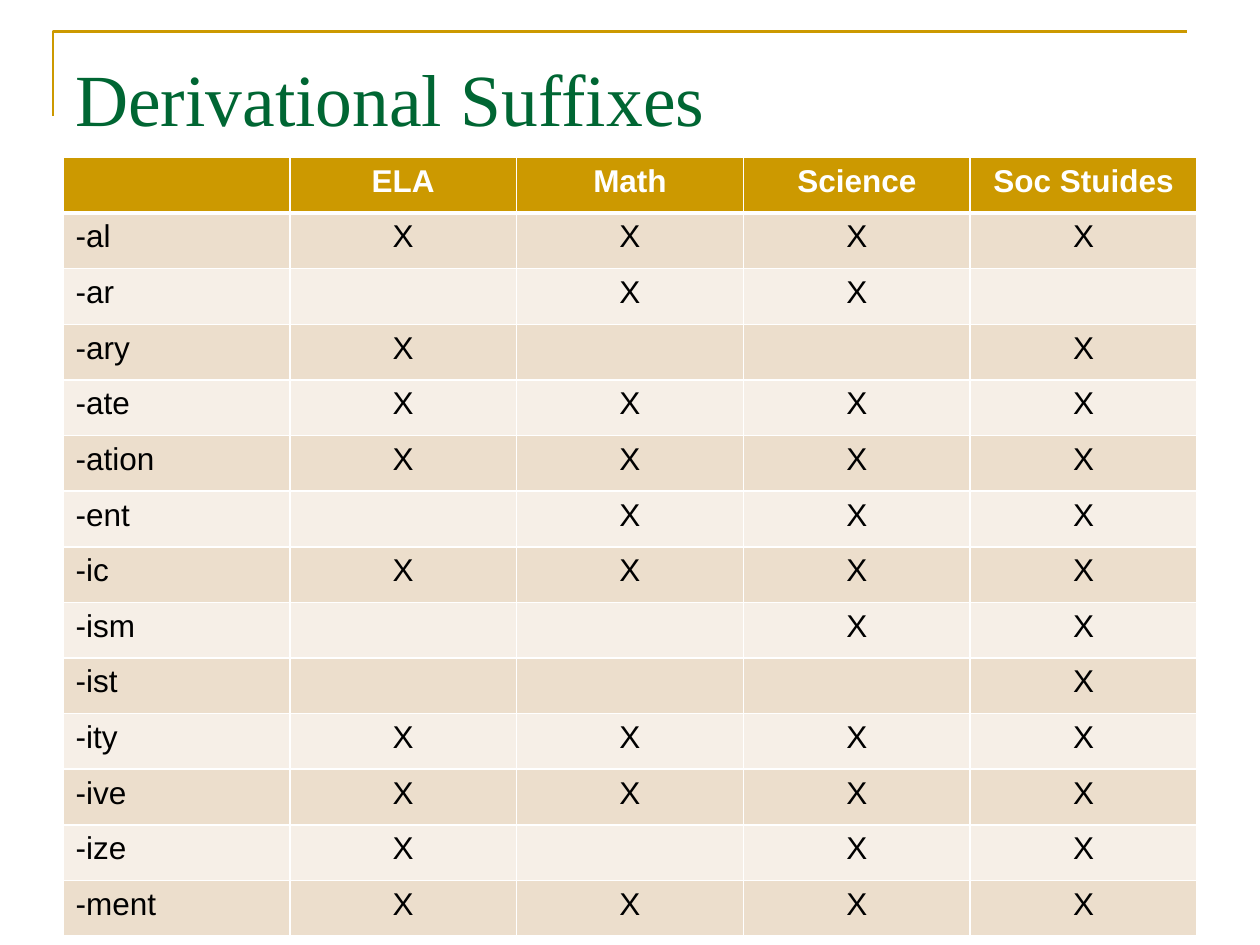
from lxml.etree import SubElement
from pptx import Presentation
from pptx.dml.color import RGBColor
from pptx.enum.text import MSO_ANCHOR, PP_ALIGN
from pptx.oxml.ns import qn
from pptx.util import Inches, Pt

GOLD = RGBColor(0xCC, 0x99, 0x00)
GREEN = RGBColor(0x00, 0x66, 0x33)
BAND_DARK = RGBColor(0xEC, 0xDE, 0xCC)
BAND_LIGHT = RGBColor(0xF6, 0xEF, 0xE7)
WHITE = RGBColor(0xFF, 0xFF, 0xFF)
BLACK = RGBColor(0x00, 0x00, 0x00)

SUBJECTS = ["ELA", "Math", "Science", "Soc Stuides"]
# Suffix and its marks, one character per subject
SUFFIXES = [
    ("-al", "XXXX"),
    ("-ar", " XX "),
    ("-ary", "X  X"),
    ("-ate", "XXXX"),
    ("-ation", "XXXX"),
    ("-ent", " XXX"),
    ("-ic", "XXXX"),
    ("-ism", "  XX"),
    ("-ist", "   X"),
    ("-ity", "XXXX"),
    ("-ive", "XXXX"),
    ("-ize", "X XX"),
    ("-ment", "XXXX"),
]


def add_corner_rule(slide, left, top, width, height):
    builder = slide.shapes.build_freeform(left, top + height)
    builder.add_line_segments([(left, top), (left + width, top)], close=False)
    sp = builder.convert_to_shape()
    sp.shadow.inherit = False
    sp.fill.background()
    sp.line.color.rgb = GOLD
    sp.line.width = Pt(1.5)


def add_title(slide, left, top, width, height, text):
    tf = slide.shapes.add_textbox(left, top, width, height).text_frame
    tf.word_wrap = True
    tf.vertical_anchor = MSO_ANCHOR.TOP
    tf.margin_top = Inches(0.12)
    p = tf.paragraphs[0]
    p.text = text
    p.font.name = "Times New Roman"
    p.font.size = Pt(42)
    p.font.color.rgb = GREEN


def set_borders(cell, top, bottom):
    tc_pr = cell._tc.get_or_add_tcPr()
    for side, width in (("L", 1), ("R", 1), ("T", top), ("B", bottom)):
        ln = SubElement(tc_pr, qn(f"a:ln{side}"), w=str(Pt(width)))
        fill = SubElement(ln, qn("a:solidFill"))
        SubElement(fill, qn("a:srgbClr"), val=str(WHITE))


def add_suffix_table(slide, left, top, width, height):
    rows = [["", *SUBJECTS]]
    rows += [[suffix, *marks] for suffix, marks in SUFFIXES]
    table = slide.shapes.add_table(
        len(rows), len(rows[0]), left, top, width, height).table
    for row in table.rows:
        row.height = int(height / len(rows))

    for i, texts in enumerate(rows):
        header = i == 0
        fill = GOLD if header else BAND_DARK if i % 2 else BAND_LIGHT
        for j, text in enumerate(texts):
            cell = table.cell(i, j)
            # The rule under the header is heavier
            set_borders(cell, 3 if i == 1 else 1, 3 if header else 1)
            cell.fill.solid()
            cell.fill.fore_color.rgb = fill
            p = cell.text_frame.paragraphs[0]
            p.text = text.strip()
            p.alignment = PP_ALIGN.CENTER if j else PP_ALIGN.LEFT
            p.font.name = "Arial"
            p.font.size = Pt(18)
            p.font.bold = header
            p.font.color.rgb = WHITE if header else BLACK


def main():
    prs = Presentation()
    prs.slide_width, prs.slide_height = Inches(10), Inches(7.5)
    slide = prs.slides.add_slide(prs.slide_layouts[6])
    add_corner_rule(slide, Inches(0.42), Inches(0.25), Inches(9), Inches(0.67))
    add_title(slide, Inches(0.5), Inches(0.3), Inches(9), Inches(1.25),
              "Derivational Suffixes")
    add_suffix_table(slide, Inches(0.5), Inches(1.25), Inches(9), Inches(6.18))
    prs.save("out.pptx")


if __name__ == "__main__":
    main()
